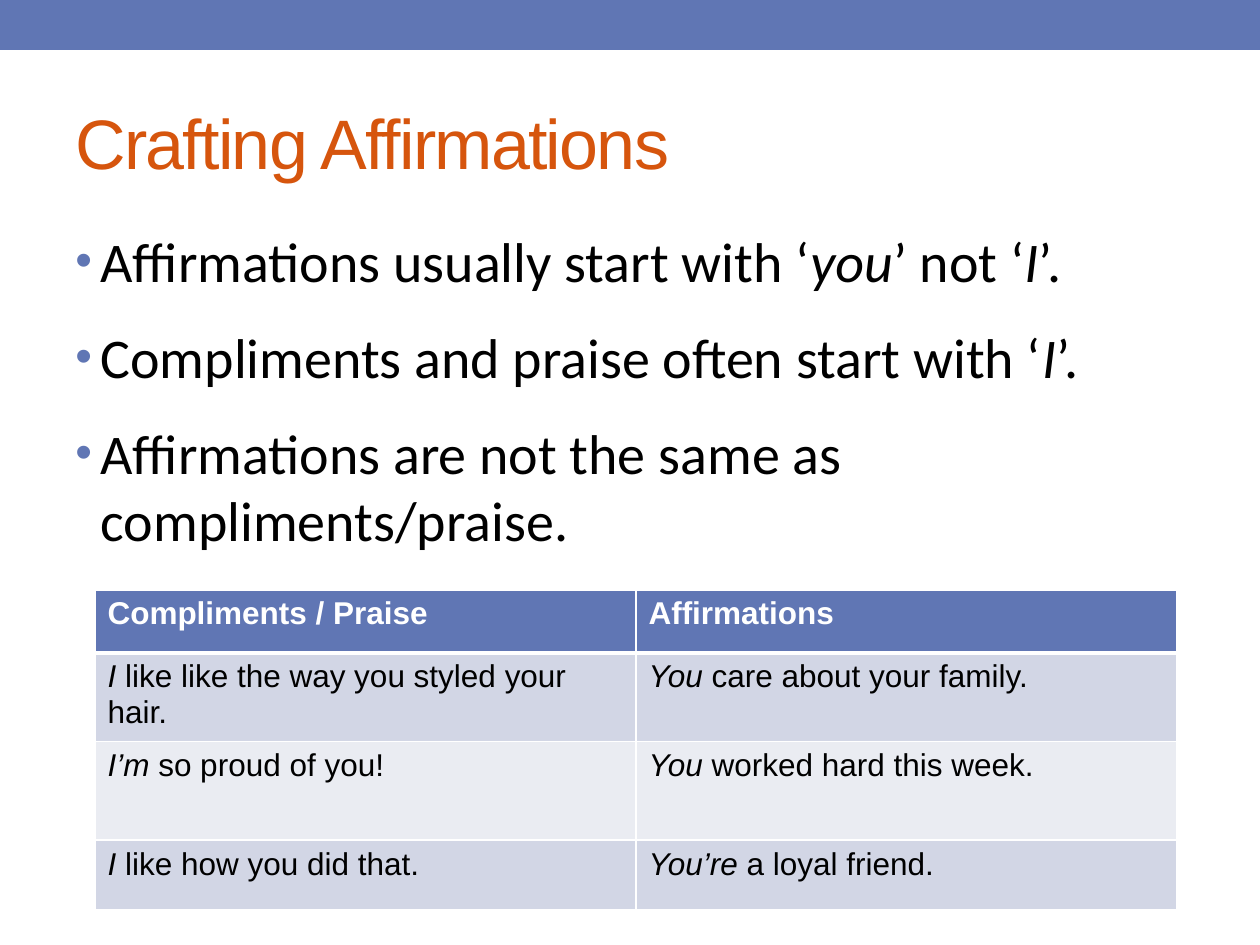
from lxml import etree
from pptx import Presentation
from pptx import util as u
from pptx.dml.color import RGBColor
from pptx.enum import shapes, text
from pptx.oxml.ns import qn

SCALE = 914400 / 126  # EMU per px
BLUE = RGBColor(0x60, 0x76, 0xB4)
ORANGE = RGBColor(0xD6, 0x55, 0x0D)
BLACK = RGBColor(0, 0, 0)
WHITE = RGBColor(0xFF, 0xFF, 0xFF)
BAND_DARK = RGBColor(0xD2, 0xD6, 0xE5)
BAND_LIGHT = RGBColor(0xEA, 0xEC, 0xF2)


def px(n):
    return u.Emu(round(n * SCALE))


def add_runs(p, content, size, font="Arial", color=BLACK, bold=False, spacing=0):
    """Write content into p; parts between asterisks are italic."""
    for i, part in enumerate(content.split("*")):
        if not part:
            continue
        r = p.add_run()
        r.text = part
        f = r.font
        f.name, f.size, f.bold, f.italic = font, u.Pt(size), bold, i % 2 == 1
        f.color.rgb = color
        if spacing:
            r._r.get_or_add_rPr().set("spc", str(spacing * 100))


class Deck:
    def __init__(self, width, height):
        self.prs = Presentation()
        self.prs.slide_width, self.prs.slide_height = px(width), px(height)
        self.s = self.prs.slides.add_slide(self.prs.slide_layouts[6])

    def bar(self, x, y, w, h, color):
        sp = self.s.shapes.add_shape(shapes.MSO_SHAPE.RECTANGLE, px(x), px(y), px(w), px(h))
        sp.shadow.inherit = False
        sp.fill.solid()
        sp.fill.fore_color.rgb = color
        sp.line.fill.background()

    def text_box(self, x, y, w, h, anchor=text.MSO_ANCHOR.TOP):
        tf = self.s.shapes.add_textbox(px(x), px(y), px(w), px(h)).text_frame
        tf.word_wrap = True
        tf.vertical_anchor = anchor
        return tf

    def title(self, content, x, y, w, h):
        tf = self.text_box(x, y, w, h, text.MSO_ANCHOR.MIDDLE)
        add_runs(tf.paragraphs[0], content, 40, color=ORANGE, spacing=-1)

    def bullets(self, items, x, y, w, h):
        tf = self.text_box(x, y, w, h)
        for i, item in enumerate(items):
            p = tf.add_paragraph() if i else tf.paragraphs[0]
            p.space_before, p.space_after = u.Pt(6.4), u.Pt(10)
            pPr = p._p.get_or_add_pPr()
            pPr.set("marL", str(u.Inches(0.2)))
            pPr.set("indent", str(-u.Inches(0.2)))
            clr = etree.SubElement(pPr, qn("a:buClr"))
            etree.SubElement(clr, qn("a:srgbClr"), val=str(BLUE))
            etree.SubElement(pPr, qn("a:buSzPct"), val="85000")
            etree.SubElement(pPr, qn("a:buFont"), typeface="Arial")
            etree.SubElement(pPr, qn("a:buChar"), char="•")
            add_runs(p, item, 32, font="Calibri")

    def borders(self, cell, **widths):
        tcPr = cell._tc.get_or_add_tcPr()
        for side, width in widths.items():
            ln = etree.SubElement(tcPr, qn(f"a:ln{side}"), w=str(u.Pt(width)))
            fill = etree.SubElement(ln, qn("a:solidFill"))
            etree.SubElement(fill, qn("a:srgbClr"), val=str(WHITE))

    def table(self, rows, x, y, col_width, heights):
        cols = len(rows[0])
        tbl = self.s.shapes.add_table(len(rows), cols, px(x), px(y),
                                      px(col_width * cols), px(sum(heights))).table
        for col in tbl.columns:
            col.width = px(col_width)
        for i, (row, height) in enumerate(zip(rows, heights)):
            tbl.rows[i].height = px(height)
            header = i == 0
            band = BLUE if header else (BAND_LIGHT, BAND_DARK)[i % 2]
            for j, content in enumerate(row):
                cell = tbl.cell(i, j)
                self.borders(cell, L=1, R=1, T=3 if i == 1 else 1, B=3 if header else 1)
                cell.fill.solid()
                cell.fill.fore_color.rgb = band
                add_runs(cell.text_frame.paragraphs[0], content, 18,
                         color=WHITE if header else BLACK, bold=header)


def main():
    deck = Deck(1260, 945)

    # Top band and title
    deck.bar(0, 0, 1260, 50, BLUE)
    deck.title("Crafting Affirmations", 63, 73, 1134, 136)

    # Main points
    deck.bullets([
        "Affirmations usually start with ‘*you*’ not ‘*I*’.",
        "Compliments and praise often start with ‘*I*’.",
        "Affirmations are not the same as compliments/praise.",
    ], 63, 220, 1134, 672)

    # Comparison table
    deck.table([
        ("Compliments / Praise", "Affirmations"),
        ("*I* like like the way you styled your hair.", "*You* care about your family."),
        ("*I’m* so proud of you!", "*You* worked hard this week."),
        ("*I *like how you did that.", "*You’re* a loyal friend."),
    ], 95, 590, 541, (63, 84, 99, 70))

    deck.prs.save("out.pptx")


if __name__ == "__main__":
    main()
